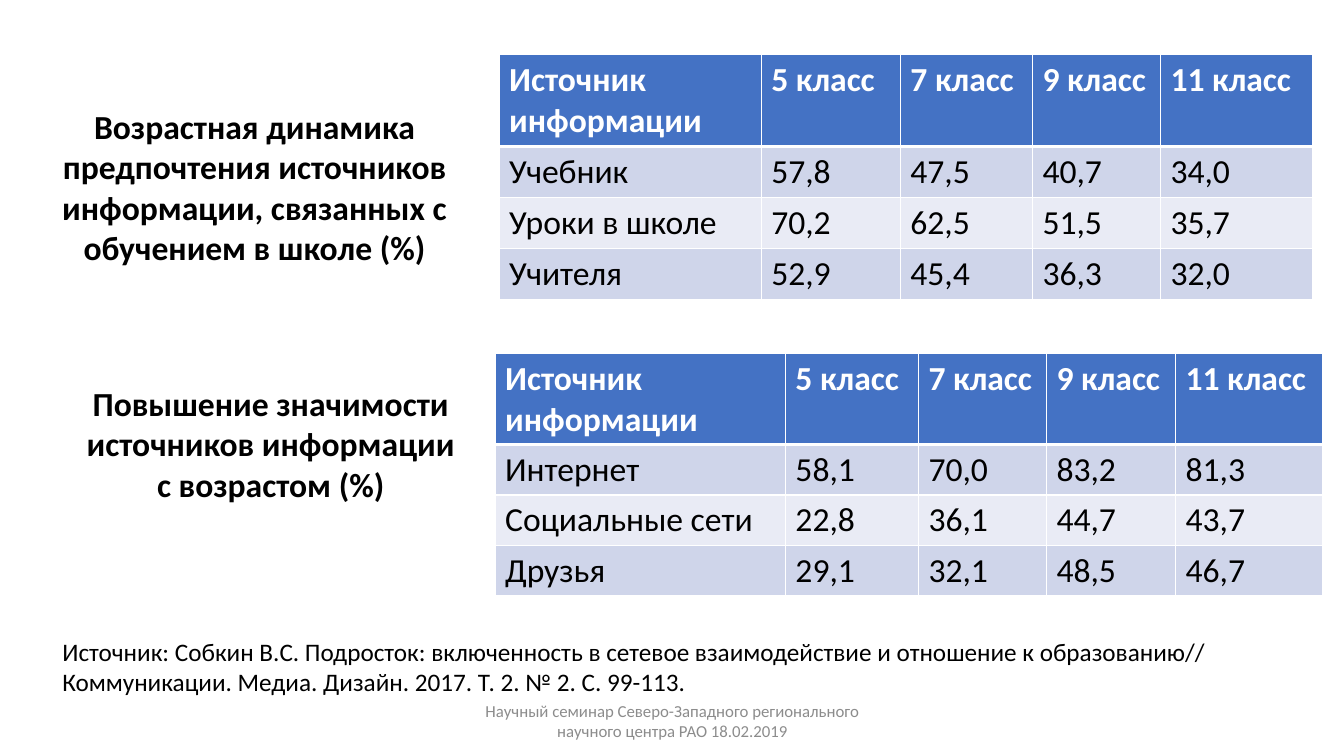
from lxml import etree
from pptx import Presentation
from pptx.dml.color import RGBColor
from pptx.enum.text import MSO_ANCHOR, PP_ALIGN
from pptx.oxml.ns import qn
from pptx.util import Inches, Pt

FONT = "Calibri"
BLACK = RGBColor(0x00, 0x00, 0x00)
WHITE = RGBColor(0xFF, 0xFF, 0xFF)
GRAY = RGBColor(0x8C, 0x8C, 0x8C)
HEADER_BLUE = RGBColor(0x44, 0x72, 0xC4)
BAND_DARK = RGBColor(0xCF, 0xD5, 0xEA)
BAND_LIGHT = RGBColor(0xE9, 0xEB, 0xF5)

HEADER = ("Источник информации", "5 класс", "7 класс", "9 класс", "11 класс")
SCHOOL_SOURCES = (
    HEADER,
    ("Учебник", "57,8", "47,5", "40,7", "34,0"),
    ("Уроки в школе", "70,2", "62,5", "51,5", "35,7"),
    ("Учителя", "52,9", "45,4", "36,3", "32,0"),
)
GROWING_SOURCES = (
    HEADER,
    ("Интернет", "58,1", "70,0", "83,2", "81,3"),
    ("Социальные сети", "22,8", "36,1", "44,7", "43,7"),
    ("Друзья", "29,1", "32,1", "48,5", "46,7"),
)


def style_paragraph(paragraph, size, color, bold=False):
    font = paragraph.font
    font.name, font.size, font.bold = FONT, Pt(size), bold
    font.color.rgb = color


def add_text(slide, text, left, top, width, height, size, color=BLACK,
             bold=False, align=PP_ALIGN.LEFT, anchor=MSO_ANCHOR.TOP):
    box = slide.shapes.add_textbox(
        Inches(left), Inches(top), Inches(width), Inches(height))
    frame = box.text_frame
    frame.word_wrap = True
    frame.vertical_anchor = anchor
    paragraph = frame.paragraphs[0]
    paragraph.text = text
    paragraph.alignment = align
    style_paragraph(paragraph, size, color, bold)


def set_borders(cell, top, bottom):
    """Draw white cell borders; top and bottom are widths in points."""
    properties = cell._tc.get_or_add_tcPr()
    for side, width in (("L", 1), ("R", 1), ("T", top), ("B", bottom)):
        line = etree.SubElement(properties, qn(f"a:ln{side}"), w=str(Pt(width)))
        fill = etree.SubElement(line, qn("a:solidFill"))
        etree.SubElement(fill, qn("a:srgbClr"), val=str(WHITE))


def style_cell(cell, row):
    is_header = row == 0
    set_borders(cell, top=3 if row == 1 else 1, bottom=3 if is_header else 1)
    cell.fill.solid()
    if is_header:
        cell.fill.fore_color.rgb = HEADER_BLUE
    else:
        cell.fill.fore_color.rgb = BAND_DARK if row % 2 else BAND_LIGHT
    style_paragraph(cell.text_frame.paragraphs[0], 24,
                    WHITE if is_header else BLACK, is_header)


def add_source_table(slide, rows, left, top, column_widths):
    frame = slide.shapes.add_table(
        len(rows), len(column_widths), Inches(left), Inches(top),
        Inches(sum(column_widths)), Inches(2.4))
    table = frame.table
    for column, width in zip(table.columns, column_widths):
        column.width = Inches(width)
    for row, values in enumerate(rows):
        table.rows[row].height = Inches(0.5 if row else 0.9)
        for column, value in enumerate(values):
            cell = table.cell(row, column)
            cell.text = value
            style_cell(cell, row)


def main():
    presentation = Presentation()
    presentation.slide_width = Inches(13.33)
    presentation.slide_height = Inches(7.5)
    slide = presentation.slides.add_slide(presentation.slide_layouts[6])

    add_source_table(slide, SCHOOL_SOURCES, 4.95, 0.54,
                     (2.6, 1.38, 1.31, 1.27, 1.51))
    add_text(slide, "Возрастная динамика предпочтения источников информации, "
             "связанных с обучением в школе (%)",
             0.36, 1, 4.33, 1.72, 24, bold=True, align=PP_ALIGN.CENTER)
    add_source_table(slide, GROWING_SOURCES, 4.91, 3.51,
                     (2.88, 1.32, 1.27, 1.28, 1.46))
    add_text(slide, "Повышение значимости источников информации "
             "с возрастом (%)",
             0.68, 3.75, 4.01, 1.31, 24, bold=True, align=PP_ALIGN.CENTER)
    add_text(slide, "Источник: Собкин В.С. Подросток: включенность в сетевое "
             "взаимодействие и отношение к образованию// Коммуникации. Медиа. "
             "Дизайн. 2017. Т. 2. № 2. С. 99-113.",
             0.52, 6.26, 12.62, 0.71, 18)
    add_text(slide, "Научный семинар Северо-Западного регионального научного "
             "центра РАО 18.02.2019",
             4.42, 6.95, 4.5, 0.4, 12, color=GRAY, align=PP_ALIGN.CENTER,
             anchor=MSO_ANCHOR.MIDDLE)

    presentation.save("out.pptx")


if __name__ == "__main__":
    main()
